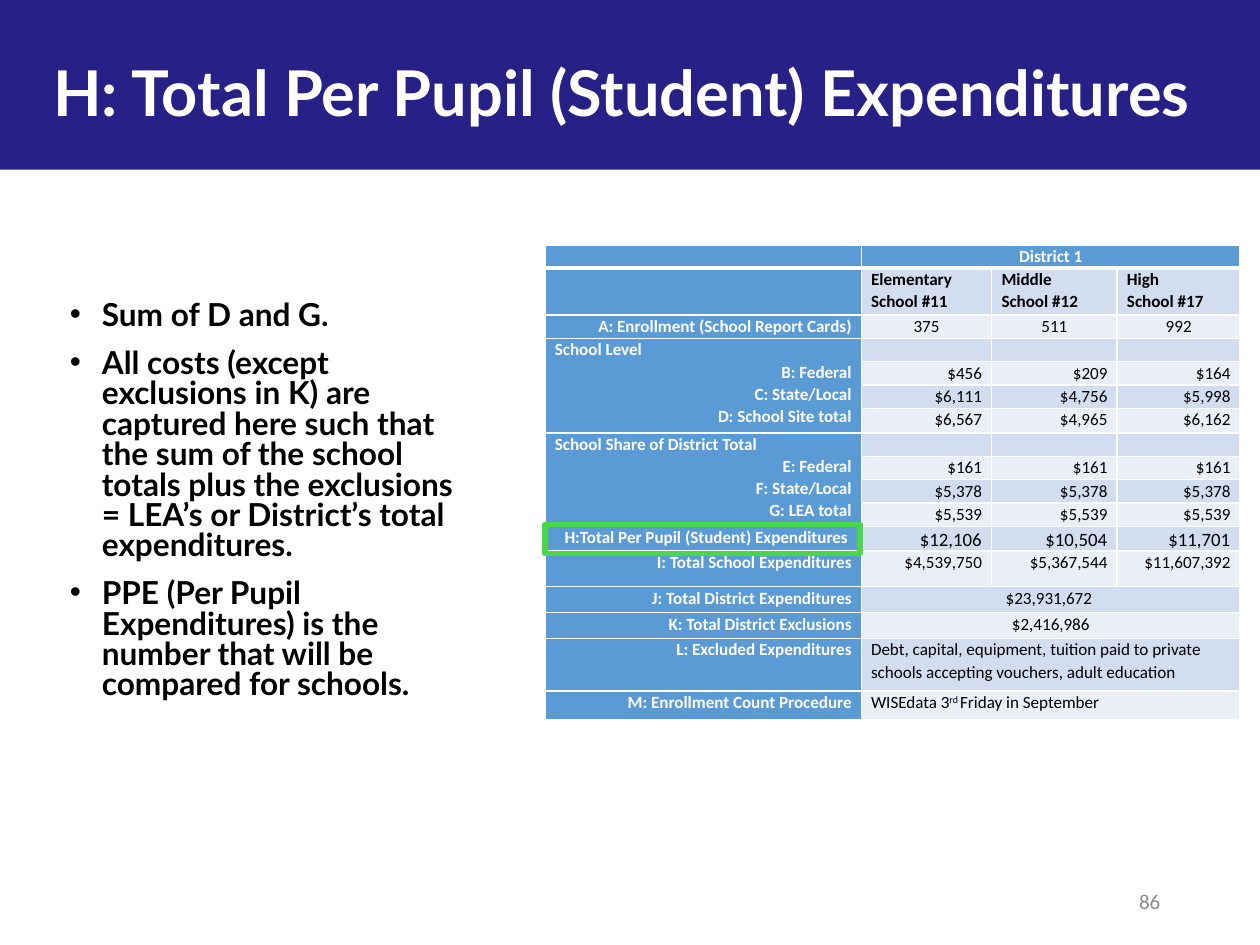
import pptx
import pptx.dml.color
import pptx.enum.shapes
import pptx.enum.text
import pptx.oxml
import pptx.oxml.ns
import pptx.util
from lxml import etree

Inches = pptx.util.Inches
Pt = pptx.util.Pt
qn = pptx.oxml.ns.qn
ALIGN = pptx.enum.text.PP_ALIGN
MIDDLE = pptx.enum.text.MSO_ANCHOR.MIDDLE
RECTANGLE = pptx.enum.shapes.MSO_SHAPE.RECTANGLE
LEFT, CENTER, RIGHT = ALIGN.LEFT, ALIGN.CENTER, ALIGN.RIGHT


def color(value):
    return pptx.dml.color.RGBColor.from_string(value)


def style(paragraph, name, size, value, bold=False, align=LEFT):
    paragraph.alignment = align
    for run in paragraph.runs:
        run.font.name = name
        run.font.size = Pt(size)
        run.font.bold = bold
        run.font.color.rgb = color(value)


presentation = pptx.Presentation()
presentation.slide_width = Inches(10.24)
presentation.slide_height = Inches(7.68)
slide = presentation.slides.add_slide(presentation.slide_layouts[6])

# Title band
band = slide.shapes.add_shape(RECTANGLE, Inches(-0.01), 0, Inches(10.25), Inches(1.38))
band.shadow.inherit = False
band.fill.solid()
band.fill.fore_color.rgb = color("262087")
band.line.fill.background()

title = slide.shapes.add_textbox(0, 0, Inches(10.24), Inches(1.48)).text_frame
title.word_wrap = True
title.vertical_anchor = MIDDLE
title.text = "H: Total Per Pupil (Student) Expenditures "
style(title.paragraphs[0], "Lato", 36.9, "FFFFFF", True, CENTER)

# Slide number
number = slide.shapes.add_textbox(Inches(7.23), Inches(7.12), Inches(2.3), Inches(0.41)).text_frame
number.word_wrap = True
number.vertical_anchor = MIDDLE
number.text = "86"
style(number.paragraphs[0], "Calibri", 12.3, "8C8C8C", align=RIGHT)

# Bulleted explanation
notes = slide.shapes.add_textbox(Inches(0.47), Inches(2.41), Inches(3.37), Inches(3.9)).text_frame
notes.word_wrap = True
notes.text = "\n".join([
    "Sum of D and G.",
    "All costs (except exclusions in K) are captured here such that the sum of the "
    "school totals plus the exclusions = LEA’s or District’s total expenditures.",
    "PPE (Per Pupil Expenditures) is the number that will be compared for schools.",
])
for index, paragraph in enumerate(notes.paragraphs):
    properties = paragraph._p.get_or_add_pPr()
    properties.set("marL", str(Inches(0.26)))
    properties.set("indent", str(-Inches(0.26)))
    etree.SubElement(properties, qn("a:buFont")).set("typeface", "Arial")
    etree.SubElement(properties, qn("a:buChar")).set("char", "•")
    paragraph.line_spacing = 0.8
    if index:
        paragraph.space_before = Pt(10.2)
    style(paragraph, "Lato", 18.5, "000000", True)

# Expenditure table: label, alignment of the values, values
ROWS = [
    ("", CENTER, ["District 1"]),
    ("", LEFT, ["Elementary\nSchool #11", "Middle\nSchool #12", "High\nSchool #17"]),
    ("A: Enrollment (School Report Cards)", CENTER, ["375", "511", "992"]),
    ("School Level\nB: Federal\nC: State/Local\nD: School Site total", RIGHT, ["", "", ""]),
    (None, RIGHT, ["$456", "$209", "$164"]),
    (None, RIGHT, ["$6,111", "$4,756", "$5,998"]),
    (None, RIGHT, ["$6,567", "$4,965", "$6,162"]),
    ("School Share of District Total\nE: Federal\nF: State/Local\nG: LEA total", RIGHT, ["", "", ""]),
    (None, RIGHT, ["$161"] * 3),
    (None, RIGHT, ["$5,378"] * 3),
    (None, RIGHT, ["$5,539"] * 3),
    ("H:Total Per Pupil (Student) Expenditures ", RIGHT, ["$12,106", "$10,504", "$11,701"]),
    ("I: Total School Expenditures", RIGHT, ["$4,539,750", "$5,367,544", "$11,607,392"]),
    ("J: Total District Expenditures", CENTER, ["$23,931,672 "]),
    ("K: Total District Exclusions", CENTER, ["$2,416,986"]),
    ("L: Excluded Expenditures", LEFT,
     ["Debt, capital, equipment, tuition paid to private schools accepting vouchers, adult education"]),
    ("M: Enrollment Count Procedure", LEFT, ["WISEdata 3"]),
]
HEIGHTS = [0.19, 0.38, 0.19, 0.19, 0.19, 0.19, 0.2, 0.19, 0.19, 0.19, 0.19, 0.2, 0.29, 0.21, 0.21, 0.43, 0.23]
WIDTHS = [2.57, 1.06, 1.02, 1]
TOTAL_ROW = 11

table = slide.shapes.add_table(len(ROWS), len(WIDTHS), Inches(4.43), Inches(1.99),
                               Inches(5.65), Inches(3.86)).table
for column, width in zip(table.columns, WIDTHS):
    column.width = Inches(width)
for row, height in zip(table.rows, HEIGHTS):
    row.height = Inches(height)

for row, (label, value_align, values) in enumerate(ROWS):
    if label and "\n" in label:
        table.cell(row, 0).merge(table.cell(row + 3, 0))
    if len(values) == 1:
        table.cell(row, 1).merge(table.cell(row, 3))

    texts = [label or ""] + values
    for column in range(len(WIDTHS)):
        cell = table.cell(row, column)
        cell.margin_left = cell.margin_right = Inches(0.08)
        cell.margin_top = cell.margin_bottom = 0

        # White borders, thicker under the header row
        for side in ("L", "R", "T", "B"):
            thick = (row == 0 and side == "B") or (row == 1 and side == "T")
            border = etree.SubElement(cell._tc.get_or_add_tcPr(), qn("a:ln" + side))
            border.set("w", str(Pt(3 if thick else 1)))
            line_fill = etree.SubElement(border, qn("a:solidFill"))
            etree.SubElement(line_fill, qn("a:srgbClr")).set("val", "FFFFFF")

        is_header = row == 0 or column == 0
        cell.fill.solid()
        cell.fill.fore_color.rgb = color("5B9BD5" if is_header else "D2DEEF" if row % 2 else "EAEFF7")

        cell.text_frame.text = texts[column] if column < len(texts) else ""
        if row == len(ROWS) - 1 and column == 1:
            paragraph = cell.text_frame.paragraphs[0]
            ordinal = paragraph.add_run()
            ordinal.text = "rd "
            ordinal._r.get_or_add_rPr().set("baseline", "30000")
            paragraph.add_run().text = "Friday in September"

        size = 11 if row == TOTAL_ROW and column else 10
        for index, paragraph in enumerate(cell.text_frame.paragraphs):
            is_group = column == 0 and index == 0 and len(cell.text_frame.paragraphs) > 1
            align = value_align if column else LEFT if is_group else RIGHT
            paragraph.line_spacing = 1.07
            style(paragraph, "Calibri", size, "FFFFFF" if is_header else "000000",
                  is_header or row == 1, align)
            if not paragraph.runs:
                etree.SubElement(paragraph._p, qn("a:endParaRPr")).set("sz", "1000")

# Highlight around row H
highlight = slide.shapes.add_shape(RECTANGLE, Inches(4.43), Inches(4.26), Inches(2.56), Inches(0.24))
highlight.shadow.inherit = False
highlight.fill.background()
highlight.line.color.rgb = color("49D749")
highlight.line.width = Pt(3)

presentation.save("out.pptx")
